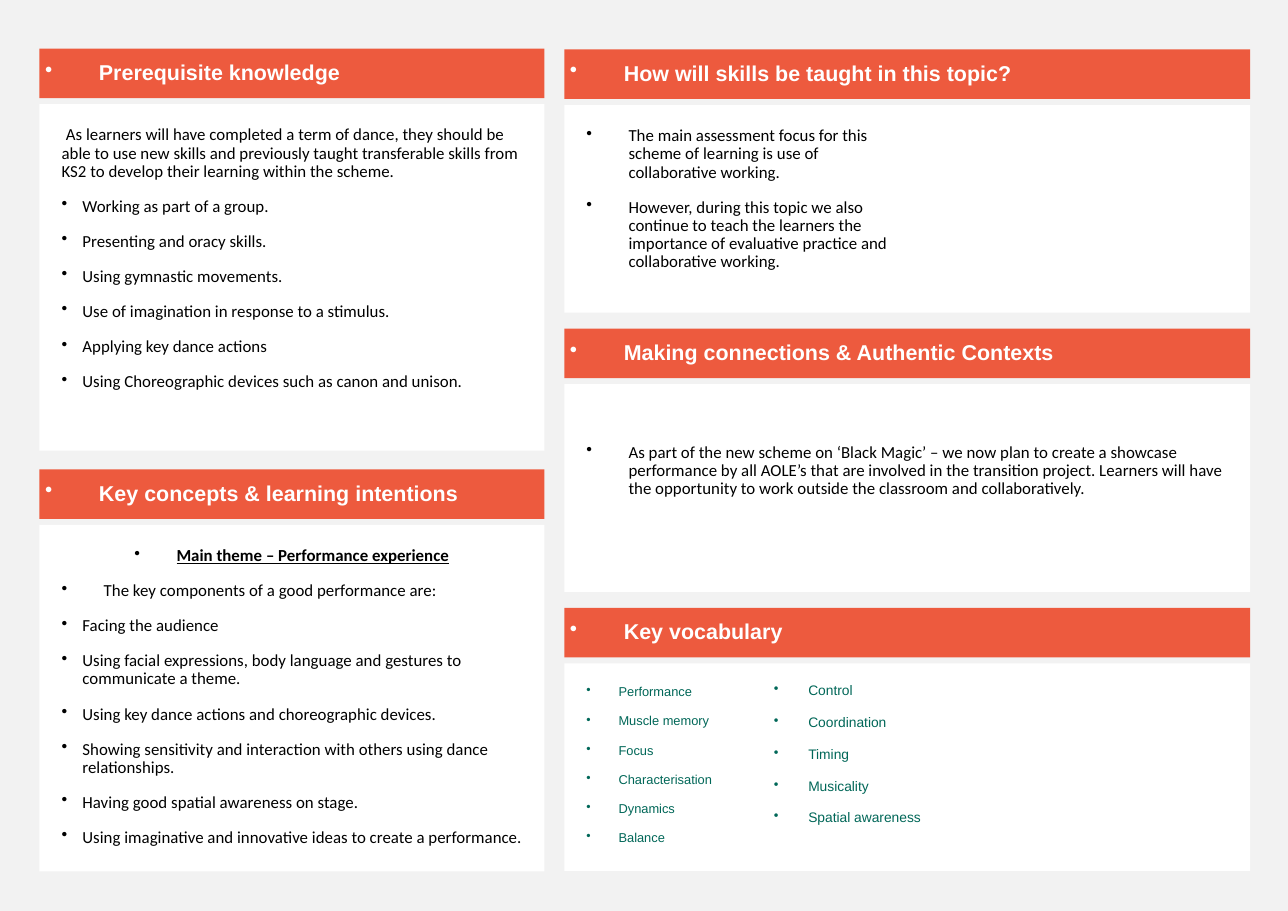
from lxml import etree
from pptx import Presentation
from pptx.dml.color import RGBColor
from pptx.enum.shapes import MSO_SHAPE
from pptx.enum.text import MSO_ANCHOR, PP_ALIGN
from pptx.oxml.ns import qn
from pptx.util import Cm, Pt

RECT = MSO_SHAPE.RECTANGLE
TOP, MIDDLE = MSO_ANCHOR.TOP, MSO_ANCHOR.MIDDLE
LEFT, CENTRE = PP_ALIGN.LEFT, PP_ALIGN.CENTER

COLOURS = {"page": "F2F2F2", "panel": "FFFFFF", "head": "ED5A3E",
           "light": "FFFFFF", "text": "000000", "word": "006758"}

# Text styles: font, size, colour, bold, space before
HEAD = ("Arial", 14, "light", True, 11)
BODY = ("Calibri", 11, "text", False, 11)
WORD = ("Arial", 8.4, "word", False, 10)
TERM = ("Arial", 9, "word", False, 11)

# Hanging indents and insets, in cm
SMALL, WIDE = 0.48, 0.97
PAD, TIGHT = 0.51, 0.13

# Columns: left, width, first top, step, panel height
SIDE = (0.91, 11.63, 1.12, 9.69, 7.98)
MAIN = (13.0, 15.8, 1.14, 6.43, 4.78)
HEAD_H, DROP = 1.14, 1.28

INTRO = ("As learners will have completed a term of dance, they should be able "
         "to use new skills and previously taught transferable skills from KS2 "
         "to develop their learning within the scheme.")
PRIOR = [
    "Working as part of a group.",
    "Presenting and oracy skills.",
    "Using gymnastic movements.",
    "Use of imagination in response to a stimulus.",
    "Applying key dance actions",
    "Using Choreographic devices such as canon and unison.",
]
THEME = "Main theme – Performance experience"
LEAD = "The key components of a good performance are:"
AIMS = [
    "Facing the audience",
    "Using facial expressions, body language and gestures to communicate a theme.",
    "Using key dance actions and choreographic devices.",
    "Showing sensitivity and interaction with others using dance relationships.",
    "Having good spatial awareness on stage.",
    "Using imaginative and innovative ideas to create a performance.",
]
SKILLS = [
    "The main assessment focus for this scheme of learning is use of "
    "collaborative working.",
    "However, during this topic we also continue to teach the learners the "
    "importance of evaluative practice and collaborative working.",
]
LINKS = [
    "As part of the new scheme on ‘Black Magic’ – we now plan to create a "
    "showcase performance by all AOLE’s that are involved in the transition "
    "project. Learners will have the opportunity to work outside the classroom "
    "and collaboratively.",
]
WORDS = ["Performance", "Muscle memory", "Focus", "Characterisation",
         "Dynamics", "Balance"]
TERMS = ["Control", "Coordination", "Timing", "Musicality", "Spatial awareness"]


def colour(name):
    return RGBColor.from_string(COLOURS[name])


def add_para(frame, text, style, hang=0):
    """Add one paragraph, with a hanging bullet if hang is given."""
    para = frame.paragraphs[0]
    if para.runs:
        para = frame.add_paragraph()
    para.add_run().text = text
    if hang:
        props = para._p.get_or_add_pPr()
        props.set("marL", str(Cm(hang)))
        props.set("indent", str(-Cm(hang)))
        etree.SubElement(props, qn("a:buChar")).set("char", "•")
    face, size, tint, bold, before = style
    para.alignment = LEFT
    para.line_spacing = 0.9
    para.space_before = Pt(before)
    para.font.name, para.font.size, para.font.bold = face, Pt(size), bold
    para.font.color.rgb = colour(tint)
    return para


def add_list(frame, items, style, hang):
    for item in items:
        add_para(frame, item, style, hang)


def set_frame(frame, pad, anchor=TOP):
    frame.word_wrap = True
    frame.vertical_anchor = anchor
    frame.margin_left = frame.margin_right = Cm(pad)
    frame.margin_top = frame.margin_bottom = Cm(pad)


def add_box(slide, left, top, width, height, fill, pad, anchor=TOP):
    box = slide.shapes.add_shape(RECT, Cm(left), Cm(top), Cm(width), Cm(height))
    box.shadow.inherit = False
    box.fill.solid()
    box.fill.fore_color.rgb = colour(fill)
    box.line.fill.background()
    set_frame(box.text_frame, pad, anchor)
    return box.text_frame


def add_part(slide, column, row, title):
    """Draw a heading bar with its panel; return the panel's text frame."""
    left, width, first, step, height = column
    top = first + row * step
    head = add_box(slide, left, top, width, HEAD_H, "head", TIGHT, MIDDLE)
    add_para(head, title, HEAD, 1.24)
    return add_box(slide, left, top + DROP, width, height, "panel", PAD)


def main():
    deck = Presentation()
    deck.slide_width, deck.slide_height = Cm(29.67), Cm(20.98)
    slide = deck.slides.add_slide(deck.slide_layouts[6])
    slide.background.fill.solid()
    slide.background.fill.fore_color.rgb = colour("page")

    # Prerequisites
    prior = add_part(slide, SIDE, 0, "Prerequisite knowledge")
    intro = add_para(prior, INTRO, BODY)
    intro._p.get_or_add_pPr().set("indent", str(Cm(0.1)))
    add_list(prior, PRIOR, BODY, SMALL)

    # Key concepts
    aims = add_part(slide, SIDE, 1, "Key concepts & learning intentions")
    theme = add_para(aims, THEME, BODY, WIDE)
    theme.alignment = CENTRE
    theme.font.bold = theme.font.underline = True
    add_para(aims, LEAD, BODY, WIDE)
    add_list(aims, AIMS, BODY, SMALL)

    # Skills, in two text columns
    skills = add_part(slide, MAIN, 0, "How will skills be taught in this topic?")
    skills._txBody.bodyPr.set("numCol", "2")
    add_list(skills, SKILLS, BODY, WIDE)

    # Connections
    links = add_part(slide, MAIN, 1, "Making connections & Authentic Contexts")
    links.margin_top = Cm(1.37)
    add_list(links, LINKS, BODY, WIDE)

    # Vocabulary
    words = add_part(slide, MAIN, 2, "Key vocabulary")
    add_list(words, WORDS, WORD, 0.74)
    terms = slide.shapes.add_textbox(Cm(17.7), Cm(15.62), Cm(3.76), Cm(3.58))
    set_frame(terms.text_frame, TIGHT)
    add_list(terms.text_frame, TERMS, TERM, 0.79)

    deck.save("out.pptx")


if __name__ == "__main__":
    main()
